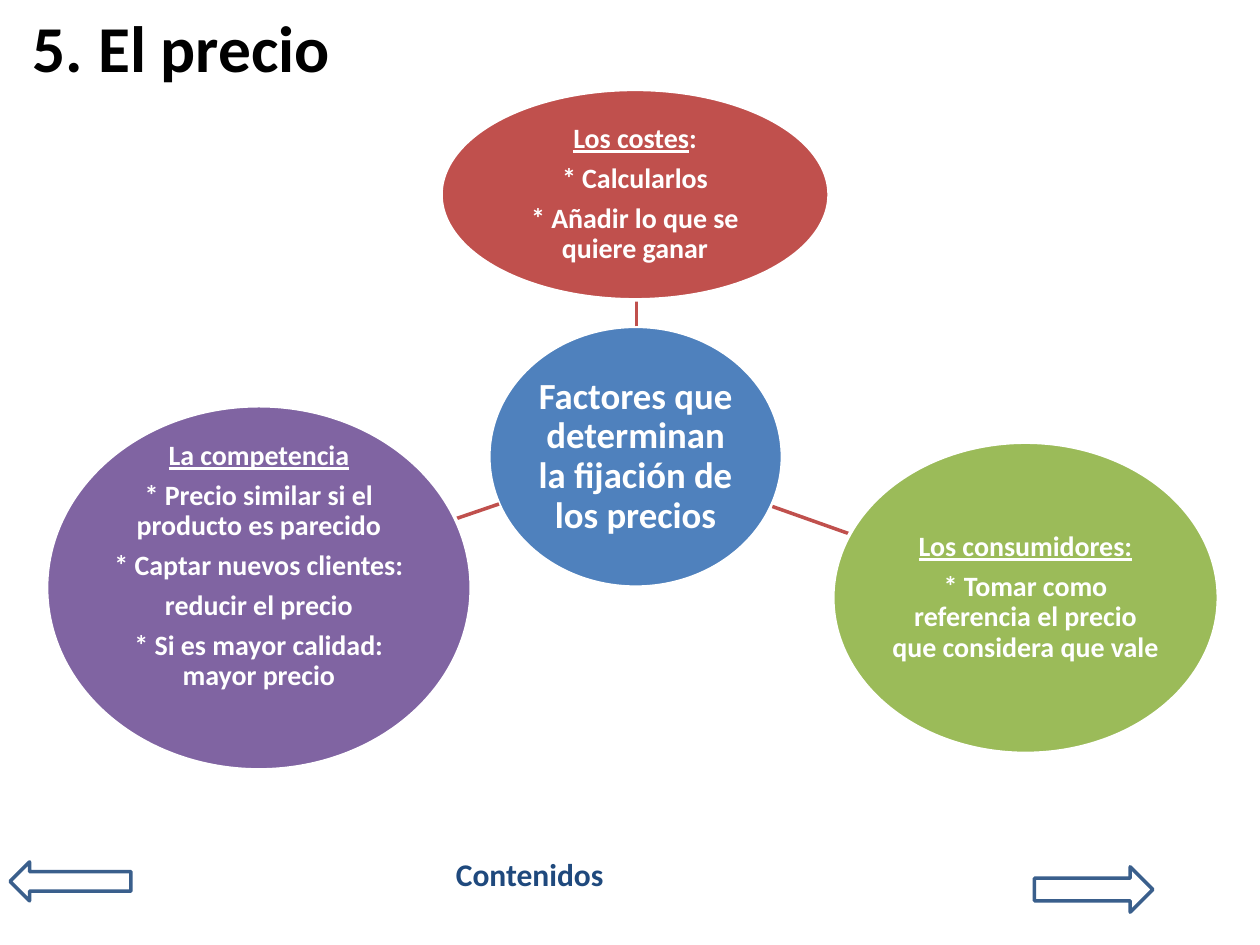
from dataclasses import dataclass

from lxml.etree import SubElement
from pptx import Presentation
from pptx.dml.color import RGBColor
from pptx.enum.shapes import MSO_CONNECTOR as Link, MSO_SHAPE as Shape
from pptx.enum.text import MSO_ANCHOR as Anchor, PP_ALIGN as Align
from pptx.oxml.ns import qn
from pptx.slide import Slide
from pptx.util import Inches, Pt


def rgb(value):
    return RGBColor.from_string(value)


def write(frame, paragraphs, font="Calibri", size=16, color="FFFFFF", align=Align.CENTER,
          spacing=None, after=0, underline_first=False):
    """Fill a text frame; each paragraph is a list of text spans."""
    for index, spans in enumerate(paragraphs):
        para = frame.paragraphs[0] if index == 0 else frame.add_paragraph()
        para.alignment = align
        para.line_spacing = spacing
        para.space_after = Pt(after)
        for position, text in enumerate(spans):
            span = para.add_run()
            span.text = text
            span.font.name = font
            span.font.size = Pt(size)
            span.font.bold = True
            span.font.underline = underline_first and index == position == 0
            span.font.color.rgb = rgb(color)


@dataclass
class PriceSlide:
    page: Slide
    white: str = "FFFFFF"
    link_color: str = "C0504D"
    arrow_color: str = "3A5F8C"
    line_width: float = 2

    def shape(self, kind, place, line, fill=None):
        shape = self.page.shapes.add_shape(kind, *map(Inches, place))
        shape.shadow.inherit = False
        if fill:
            shape.fill.solid()
            shape.fill.fore_color.rgb = rgb(fill)
        else:
            shape.fill.background()
        shape.line.color.rgb = rgb(line)
        shape.line.width = Pt(self.line_width)
        return shape

    def title(self, text, place):
        box = self.page.shapes.title
        box.left, box.top, box.width, box.height = map(Inches, place)
        box.text_frame.vertical_anchor = Anchor.MIDDLE
        write(box.text_frame, [[text]], size=37.4, color="000000", align=Align.LEFT)

    def bubble(self, place, fill, paragraphs, size=16, bottom=0.01, heading=True):
        frame = self.shape(Shape.OVAL, place, self.white, fill).text_frame
        frame.word_wrap = True
        frame.vertical_anchor = Anchor.MIDDLE
        frame.margin_left = frame.margin_right = frame.margin_top = Inches(0.01)
        frame.margin_bottom = Inches(bottom)
        write(frame, paragraphs, size=size, spacing=0.9, after=0.35 * size,
              underline_first=heading)

    def link(self, *ends):
        line = self.page.shapes.add_connector(Link.STRAIGHT, *map(Inches, ends))
        line.line.color.rgb = rgb(self.link_color)
        line.line.width = Pt(self.line_width)
        SubElement(line.element.spPr, qn("a:effectLst"))

    def label(self, text, place):
        box = self.page.shapes.add_textbox(*map(Inches, place))
        box.text_frame.word_wrap = True
        write(box.text_frame, [[text]], size=18, color="1F497D", align=Align.LEFT)

    def arrow(self, kind, place):
        self.shape(kind, place, self.arrow_color)


def main():
    deck = Presentation()
    deck.slide_width, deck.slide_height = Inches(10), Inches(7.5)
    slide = PriceSlide(deck.slides.add_slide(deck.slide_layouts[5]))

    slide.title("5. El precio", (0.16, 0.05, 9.42, 0.63))
    slide.bubble((3.88, 2.59, 2.33, 2.07), "4F81BD",
                 [["Factores que determinan la fijación de los precios"]],
                 size=21, heading=False)
    slide.link(5.05, 2.59, 5.05, 2.38)
    slide.bubble((3.5, 0.71, 3.08, 1.67), "C0504D",
                 [["Los costes", ":"], ["* Calcularlos"], ["* Añadir lo que se quiere ganar"]])
    slide.link(6.13, 4.02, 6.75, 4.24)
    slide.bubble((6.61, 3.51, 3.06, 2.47), "9BBB59",
                 [["Los consumidores:"],
                  ["* Tomar como referencia el precio que considera que vale"]])
    slide.link(3.96, 4, 3.61, 4.12)
    slide.bubble((0.37, 3.22, 3.37, 2.89), "8064A2",
                 [["La competencia"], ["* Precio similar si el producto es parecido"],
                  ["* Captar nuevos clientes:"], ["reducir el precio"],
                  ["* Si es mayor calidad: mayor precio"]], bottom=0.35)
    slide.label("Contenidos", (3.52, 6.74, 1.44, 0.4))
    slide.arrow(Shape.LEFT_ARROW, (0.08, 6.84, 0.96, 0.31))
    slide.arrow(Shape.RIGHT_ARROW, (8.21, 6.88, 0.94, 0.36))
    deck.save("out.pptx")


if __name__ == "__main__":
    main()
